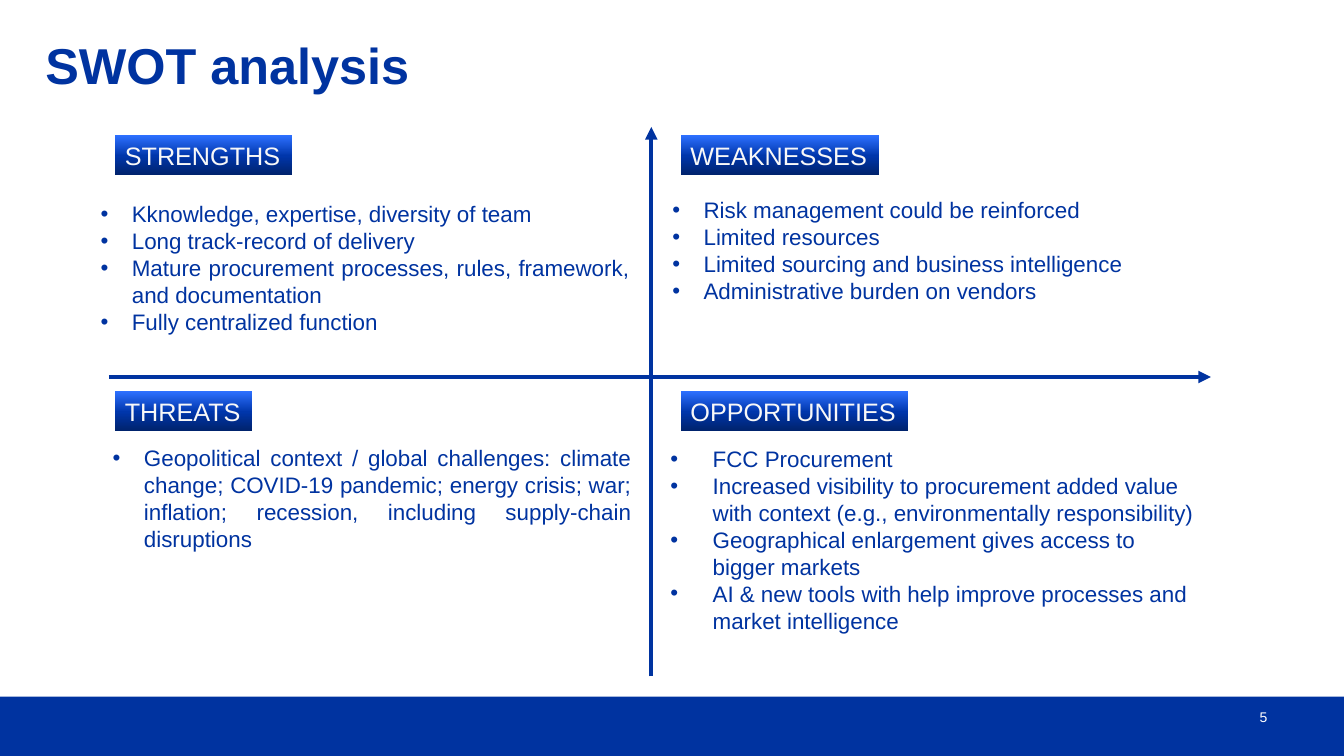
from dataclasses import dataclass

from lxml import etree
from pptx import Presentation
from pptx.dml.color import RGBColor
from pptx.enum.shapes import MSO_CONNECTOR, MSO_SHAPE
from pptx.enum.text import MSO_ANCHOR, MSO_AUTO_SIZE, PP_ALIGN
from pptx.oxml.ns import qn
from pptx.util import Inches, Pt

RECTANGLE = MSO_SHAPE.RECTANGLE
STRAIGHT = MSO_CONNECTOR.STRAIGHT
LEFT, RIGHT, JUSTIFY = PP_ALIGN.LEFT, PP_ALIGN.RIGHT, PP_ALIGN.JUSTIFY
TOP, MIDDLE = MSO_ANCHOR.TOP, MSO_ANCHOR.MIDDLE
NO_AUTOFIT = MSO_AUTO_SIZE.NONE


@dataclass(frozen=True)
class Theme:
    font: str = "Arial"
    blue: str = "0033A0"
    white: str = "FFFFFF"
    label_text: str = "F8F8F8"
    label_stops: tuple = ((0, "00226B"), (48, "0036AB"), (100, "2D70FF"))
    title_size: int = 36
    label_size: int = 18
    body_size: int = 16
    number_size: int = 10
    axis_width: int = 3


THEME = Theme()
PAGE_WIDTH, PAGE_HEIGHT = 13.33, 7.5
FOOTER_TOP = 6.91
LABEL_HEIGHT = 0.4

# Label text, label box, list box, indent, alignment, points
QUADRANTS = (
    ("STRENGTHS", (1.14, 1.34, 1.76, LABEL_HEIGHT), (0.9, 1.94, 5.44, 1.45), 0.31, JUSTIFY, (
        "Kknowledge, expertise, diversity of team",
        "Long track-record of delivery",
        "Mature procurement processes, rules, framework, and documentation",
        "Fully centralized function",
    )),
    ("WEAKNESSES", (6.75, 1.34, 1.97, LABEL_HEIGHT), (6.57, 1.9, 5.91, 1.18), 0.31, JUSTIFY, (
        "Risk management could be reinforced",
        "Limited resources",
        "Limited sourcing and business intelligence",
        "Administrative burden on vendors",
    )),
    ("THREATS", (1.14, 3.88, 1.36, LABEL_HEIGHT), (1.02, 4.36, 5.34, 1.18), 0.31, JUSTIFY, (
        "Geopolitical context / global challenges: climate change; COVID-19 pandemic; "
        "energy crisis; war; inflation; recession, including supply-chain disruptions",
    )),
    ("OPPORTUNITIES", (6.75, 3.88, 2.26, LABEL_HEIGHT), (6.55, 4.37, 5.48, 1.99), 0.42, LEFT, (
        "FCC Procurement",
        "Increased visibility to procurement added value with context "
        "(e.g., environmentally responsibility)",
        "Geographical enlargement gives access to bigger markets",
        "AI & new tools with help improve processes and market intelligence",
    )),
)


def lengths(box):
    return [Inches(value) for value in box]


def add_bullet(para, indent):
    properties = para._p.get_or_add_pPr()
    properties.set("marL", str(Inches(indent)))
    properties.set("indent", str(-Inches(indent)))
    etree.SubElement(properties, qn("a:buFont"), typeface=THEME.font)
    etree.SubElement(properties, qn("a:buChar"), char="•")


def write_text(shape, *lines, size, color=THEME.blue, bold=False, align=LEFT, anchor=TOP,
               wrap=True, margins=(0.1, 0.05), indent=None, line_spacing=None):
    """Fill a shape with one paragraph per line; an indent makes them bullets."""
    frame = shape.text_frame
    frame.auto_size = NO_AUTOFIT
    frame.word_wrap = wrap
    frame.vertical_anchor = anchor
    frame.margin_left = frame.margin_right = Inches(margins[0])
    frame.margin_top = frame.margin_bottom = Inches(margins[1])
    for index, line in enumerate(lines):
        para = frame.paragraphs[0] if index == 0 else frame.add_paragraph()
        para.alignment = align
        if line_spacing:
            para.line_spacing = line_spacing
        if indent:
            add_bullet(para, indent)
        span = para.add_run()
        span.text = line
        span.font.name = THEME.font
        span.font.size = Pt(size)
        span.font.bold = bold
        span.font.color.rgb = RGBColor.from_string(color)


def add_rectangle(page, box):
    shape = page.shapes.add_shape(RECTANGLE, *lengths(box))
    shape.shadow.inherit = False
    shape.line.fill.background()
    return shape


def fill_gradient(shape):
    """Shade a label from dark at the bottom to light at the top."""
    shape.fill.gradient()
    shape.fill.gradient_angle = 90
    stops = shape._element.spPr.find(qn("a:gradFill")).find(qn("a:gsLst"))
    for stop in list(stops):
        stops.remove(stop)
    for position, color in THEME.label_stops:
        stop = etree.SubElement(stops, qn("a:gs"), pos=str(position * 1000))
        etree.SubElement(stop, qn("a:srgbClr"), val=color)


def add_title(page, box):
    title = page.shapes.title
    title.left, title.top, title.width, title.height = lengths(box)
    write_text(title, "SWOT analysis", size=THEME.title_size, bold=True,
               margins=(0, 0), line_spacing=0.9)


def add_footer(page, box):
    left, top, width, height = box
    band = add_rectangle(page, box)
    band.fill.solid()
    band.fill.fore_color.rgb = RGBColor.from_string(THEME.blue)
    number = page.shapes.add_textbox(*lengths((left + width - 0.98, top, 0.22, 0.4)))
    write_text(number, "5", size=THEME.number_size, color=THEME.white,
               align=RIGHT, anchor=MIDDLE, margins=(0, 0))


def add_arrow(page, start, end):
    arrow = page.shapes.add_connector(STRAIGHT, *lengths(start + end))
    arrow.line.color.rgb = RGBColor.from_string(THEME.blue)
    arrow.line.width = Pt(THEME.axis_width)
    etree.SubElement(arrow.line._get_or_add_ln(), qn("a:tailEnd"), type="triangle")
    etree.SubElement(arrow._element.spPr, qn("a:effectLst"))


def add_axes(page, box):
    """Draw the arrows pointing right and up, crossing inside the box."""
    left, top, width, height = box
    center_x, center_y = left + 5.38, top + 2.48
    add_arrow(page, (left, center_y), (left + width, center_y))
    add_arrow(page, (center_x, top + height), (center_x, top))


def add_quadrant(page, name, label_box, list_box, indent, align, points):
    label = add_rectangle(page, label_box)
    fill_gradient(label)
    write_text(label, name, size=THEME.label_size, color=THEME.label_text,
               anchor=MIDDLE, wrap=False)
    body = page.shapes.add_textbox(*lengths(list_box))
    write_text(body, *points, size=THEME.body_size, align=align, indent=indent)


def main():
    deck = Presentation()
    deck.slide_width, deck.slide_height = Inches(PAGE_WIDTH), Inches(PAGE_HEIGHT)
    page = deck.slides.add_slide(deck.slide_layouts.get_by_name("Title Only"))
    add_footer(page, (0, FOOTER_TOP, PAGE_WIDTH, PAGE_HEIGHT - FOOTER_TOP))
    add_title(page, (0.45, 0.41, 12.44, 1.17))
    add_axes(page, (1.08, 1.26, 10.93, 5.45))
    for quadrant in QUADRANTS:
        add_quadrant(page, *quadrant)
    deck.save("out.pptx")


if __name__ == "__main__":
    main()
